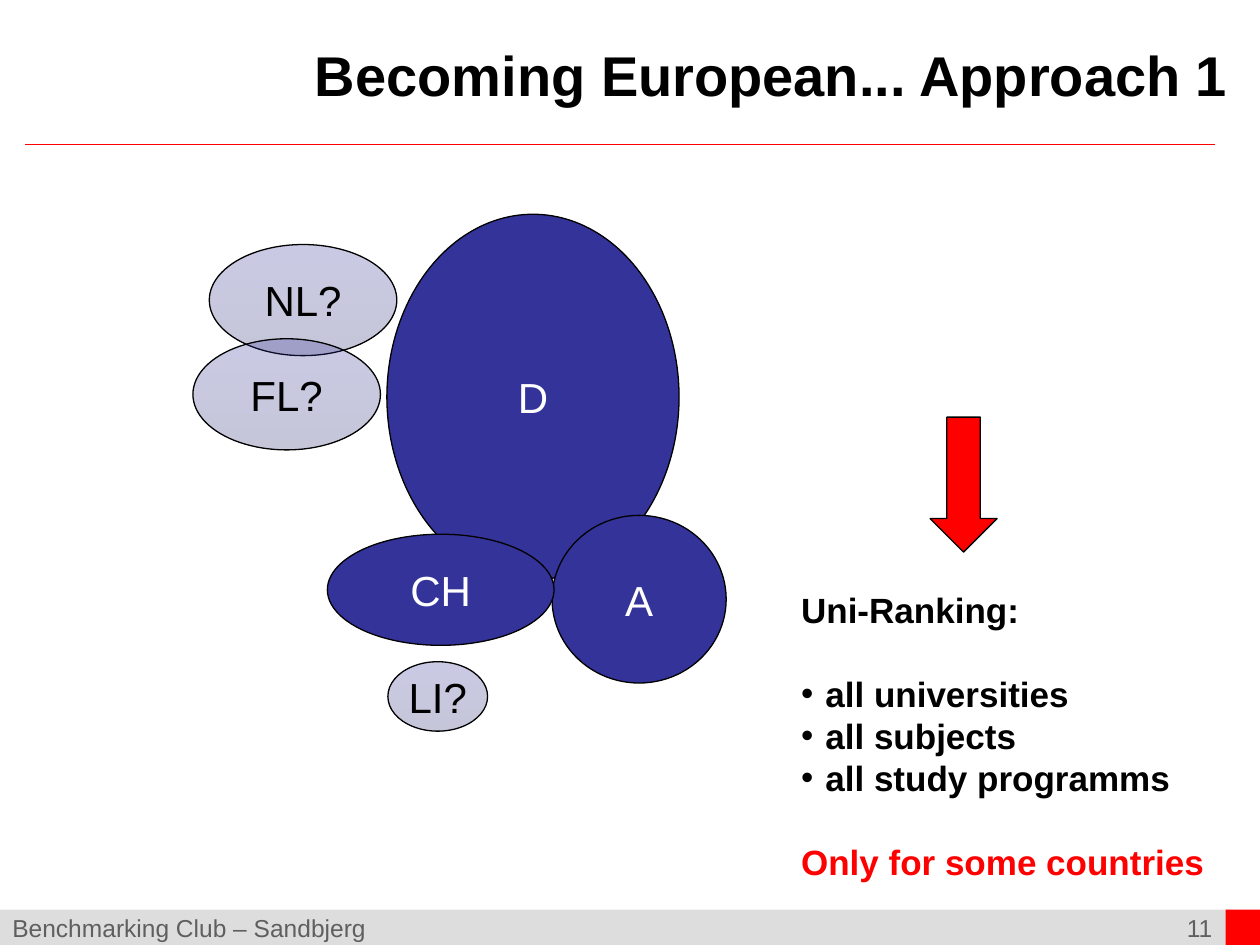
from dataclasses import dataclass

from lxml import etree
from pptx import Presentation
from pptx.dml.color import RGBColor
from pptx.enum.shapes import MSO_CONNECTOR, MSO_SHAPE
from pptx.enum.text import MSO_ANCHOR, PP_ALIGN
from pptx.oxml.ns import qn
from pptx.util import Cm, Pt

OVAL, RECT, DOWN_ARROW = MSO_SHAPE.OVAL, MSO_SHAPE.RECTANGLE, MSO_SHAPE.DOWN_ARROW
LEFT, CENTER, RIGHT = PP_ALIGN.LEFT, PP_ALIGN.CENTER, PP_ALIGN.RIGHT
TOP, MIDDLE = MSO_ANCHOR.TOP, MSO_ANCHOR.MIDDLE
STRAIGHT = MSO_CONNECTOR.STRAIGHT

FONT = "Arial"
BLACK, WHITE, RED = "000000", "FFFFFF", "FF0000"
BLUE, DARK_BLUE = "333399", "24246D"
BAR_GREY, FOOTER_GREY = "DDDDDD", "5F5F5F"
CANDIDATE_OPACITY = 26
HANGING = Cm(0.49)
LIST_LINE = Pt(24)


@dataclass
class Box:
    """Position and size in centimetres."""
    left: float
    top: float
    width: float
    height: float

    def lengths(self):
        return Cm(self.left), Cm(self.top), Cm(self.width), Cm(self.height)


@dataclass
class Country:
    label: str
    box: Box
    candidate: bool = False


@dataclass
class Line:
    text: str
    color: str = BLACK
    bullet: bool = False
    gap_before: bool = False


COUNTRIES = [
    Country("D", Box(7.8, 4.32, 5.89, 7.37)),
    Country("A", Box(11.13, 10.39, 3.51, 3.38)),
    Country("CH", Box(6.6, 10.77, 4.57, 2.24)),
    Country("NL?", Box(4.22, 4.93, 3.78, 2.24), candidate=True),
    Country("FL?", Box(3.89, 6.83, 3.78, 2.24), candidate=True),
    Country("LI?", Box(7.82, 13.34, 2.01, 1.4), candidate=True),
]

RANKING = [
    Line("Uni-Ranking:"),
    Line("all universities", bullet=True, gap_before=True),
    Line("all subjects", bullet=True),
    Line("all study programms", bullet=True),
    Line("Only for some countries", RED, gap_before=True),
]


def rgb(color: str) -> RGBColor:
    return RGBColor.from_string(color)


def set_font(paragraph, size: float, color: str, bold: bool = False):
    font = paragraph.font
    font.name, font.size, font.bold = FONT, Pt(size), bold
    font.color.rgb = rgb(color)


def add_shape(slide, kind, box: Box, fill: str, outlined: bool = False):
    shape = slide.shapes.add_shape(kind, *box.lengths())
    shape.shadow.inherit = False
    shape.fill.solid()
    shape.fill.fore_color.rgb = rgb(fill)
    if outlined:
        shape.line.color.rgb = rgb(BLACK)
        shape.line.width = Pt(0.75)
    else:
        shape.line.fill.background()
    return shape


def fade(shape):
    """Give the shape a translucent blue gradient from top to bottom."""
    shape.fill.gradient()
    shape.fill.gradient_angle = 270
    for stop, position, color in zip(shape.fill.gradient_stops, (0, 1), (BLUE, DARK_BLUE)):
        stop.position = position
        stop.color.rgb = rgb(color)
    gradient = shape._element.spPr.find(qn("a:gradFill"))
    for color in gradient.iter(qn("a:srgbClr")):
        etree.SubElement(color, qn("a:alpha"), val=str(CANDIDATE_OPACITY * 1000))


def add_country(slide, country: Country):
    oval = add_shape(slide, OVAL, country.box, BLUE, outlined=True)
    if country.candidate:
        fade(oval)
    frame = oval.text_frame
    frame.word_wrap = False
    frame.vertical_anchor = MIDDLE
    label = frame.paragraphs[0]
    label.text = country.label
    label.alignment = CENTER
    set_font(label, 24, BLACK if country.candidate else WHITE)


def add_frame(slide, box: Box, anchor=TOP):
    frame = slide.shapes.add_textbox(*box.lengths()).text_frame
    frame.word_wrap = True
    frame.vertical_anchor = anchor
    return frame


def add_text(slide, box: Box, text: str, size: float, color: str,
             bold: bool = False, align=LEFT, anchor=TOP):
    paragraph = add_frame(slide, box, anchor).paragraphs[0]
    paragraph.text = text
    paragraph.alignment = align
    set_font(paragraph, size, color, bold)


def add_list(slide, box: Box, lines: list[Line]):
    frame = add_frame(slide, box)
    for index, line in enumerate(lines):
        paragraph = frame.add_paragraph() if index else frame.paragraphs[0]
        paragraph.text = line.text
        paragraph.line_spacing = LIST_LINE
        if line.gap_before:
            paragraph.space_before = LIST_LINE
        properties = paragraph._p.get_or_add_pPr()
        properties.set("marL", str(HANGING))
        properties.set("indent", str(-HANGING))
        if line.bullet:
            etree.SubElement(properties, qn("a:buFont"), typeface=FONT)
            etree.SubElement(properties, qn("a:buChar"), char="•")
        set_font(paragraph, 20, line.color, bold=True)


def add_rule(slide, left: float, right: float, y: float):
    rule = slide.shapes.add_connector(STRAIGHT, Cm(left), Cm(y), Cm(right), Cm(y))
    rule.line.color.rgb = rgb(RED)
    rule.line.width = Pt(0.75)
    etree.SubElement(rule._element.spPr, qn("a:effectLst"))


def main():
    presentation = Presentation()
    presentation.slide_width, presentation.slide_height = Cm(25.4), Cm(19.05)
    slide = presentation.slides.add_slide(presentation.slide_layouts[6])

    add_shape(slide, RECT, Box(0, 18.34, 24.79, 0.71), BAR_GREY)
    add_rule(slide, 0.5, 24.5, 2.92)
    add_shape(slide, RECT, Box(24.71, 18.34, 0.69, 0.71), RED)
    add_text(slide, Box(22.1, 18.29, 2.59, 0.84), "11", 14, FOOTER_GREY, align=RIGHT)
    add_text(slide, Box(0, 18.29, 21.9, 0.84), "Benchmarking Club – Sandbjerg",
             14, FOOTER_GREY)
    add_text(slide, Box(6.1, 0.71, 19.3, 1.55), "Becoming European... Approach 1",
             32, BLACK, bold=True, anchor=MIDDLE)

    for country in COUNTRIES:
        add_country(slide, country)

    add_list(slide, Box(15.9, 11.73, 9.2, 6.17), RANKING)
    add_shape(slide, DOWN_ARROW, Box(18.75, 8.41, 1.35, 2.72), RED, outlined=True)

    presentation.save("out.pptx")


if __name__ == "__main__":
    main()
